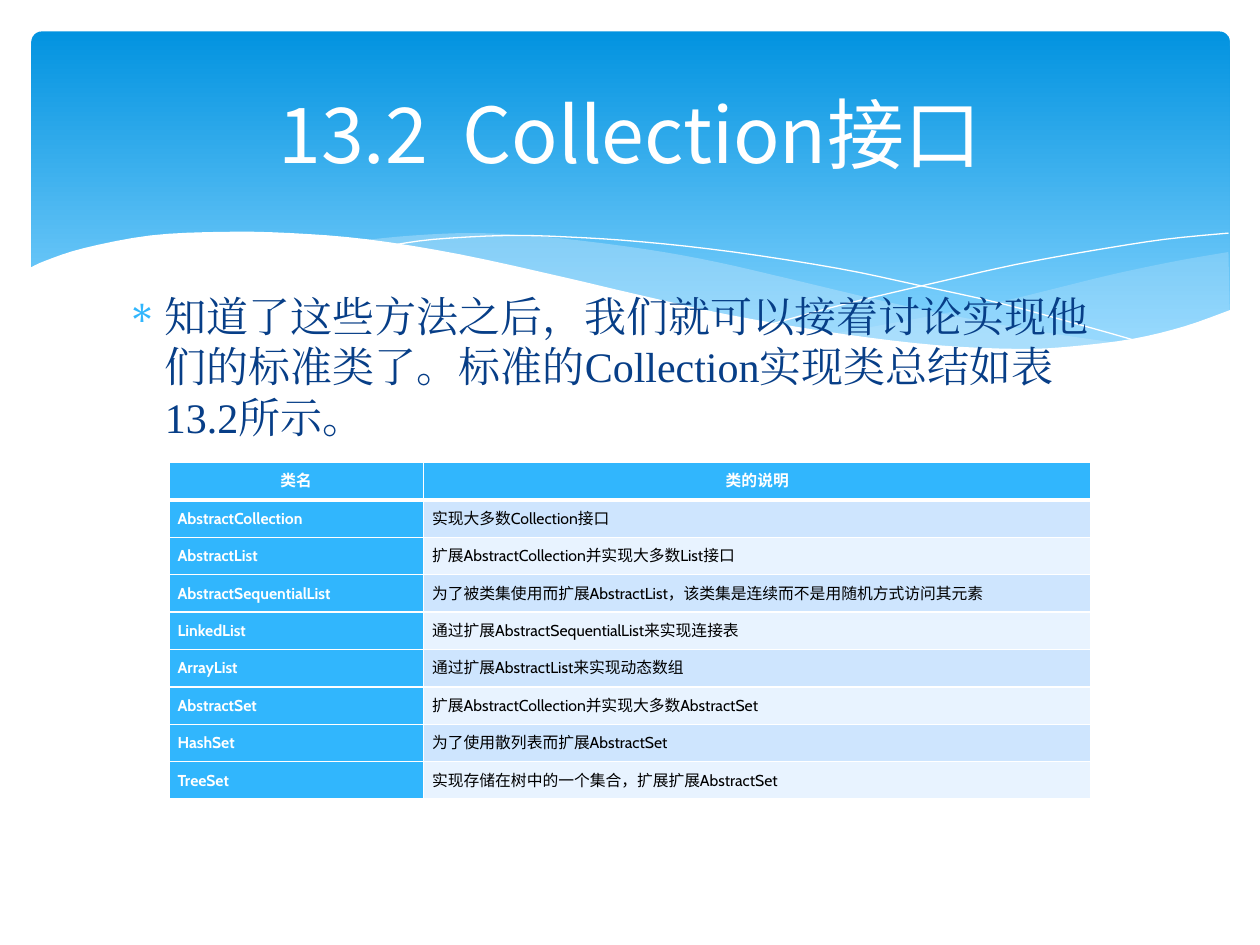
from lxml import etree
from pptx import Presentation
from pptx.dml.color import RGBColor
from pptx.enum.shapes import MSO_SHAPE
from pptx.enum.text import MSO_ANCHOR, PP_ALIGN
from pptx.oxml.ns import qn
from pptx.util import Pt

ROUNDED = MSO_SHAPE.ROUNDED_RECTANGLE
MIDDLE, CENTER, LEFT = MSO_ANCHOR.MIDDLE, PP_ALIGN.CENTER, PP_ALIGN.LEFT

WHITE = RGBColor(0xFF, 0xFF, 0xFF)
BLACK = RGBColor(0x00, 0x00, 0x00)
NAVY = RGBColor(0x07, 0x3E, 0x87)
SKY = RGBColor(0x31, 0xB6, 0xFD)
BANNER_TOP = RGBColor(0x02, 0x93, 0xE0)
BANNER_BOTTOM = RGBColor(0x83, 0xD3, 0xFE)
WAVE = RGBColor(0xC6, 0xE7, 0xFC)
BAND_DARK = RGBColor(0xCE, 0xE5, 0xFE)
BAND_LIGHT = RGBColor(0xE8, 0xF3, 0xFF)

# Key points of the waves, in points from the banner's top left corner
RIGHT_WAVE = [
    [(684, 126), (655, 131), (623.5, 137.5), (602, 142.6), (561.6, 152.6),
     (524, 160.6), (490, 167), (458, 172.8)],
    [(458, 172.8), (489.6, 177), (518.4, 180), (560, 182.2), (597, 180.7),
     (628, 176.4), (655, 170.6), (684.7, 159.8)],
]
LEFT_WAVE = [
    [(625, 178.6), (584.6, 172.8), (540, 165), (490, 154.8), (435, 141.8),
     (391.7, 131.8), (352, 124.6), (300, 118), (255.6, 115.2), (218, 116.6), (188, 119.5)],
    [(188, 119.5), (228, 125.3), (273, 134), (305, 141.8), (363.6, 154.8),
     (414.7, 165.6), (461, 173.5), (512, 180), (555, 182.2), (592.6, 181.4), (625, 178.6)],
]
FALLING_LINE = [
    (204.5, 122.4), (229.7, 118.8), (270.7, 116.6), (306, 117.4), (349, 120.2), (401, 126),
    (461, 135.4), (505.4, 144.7), (554.4, 155.5), (607.7, 170), (635, 177.8)]
RISING_LINE = [
    (423.4, 167), (465.8, 155.5), (520.6, 142.6), (562.3, 133.2), (605.5, 125.3),
    (647.3, 118.8), (684, 115.2)]
PAGE_EDGE = [
    [(685.4, 159), (658.8, 168.5), (629, 175.7), (594, 180), (564.5, 181.4), (517.7, 179.3),
     (463, 172.8), (399, 162), (344, 149.8), (304, 140.4), (245, 127.4), (192, 118.8),
     (147.6, 115.2), (109.4, 114.5), (67.7, 116.6), (30, 123.8), (8, 131), (-1.4, 135.4)],
    [(-1.4, 219), (685.4, 219)],
]

TITLE = "13.2  Collection接口"
INTRODUCTION = ("知道了这些方法之后，我们就可以接着讨论实现他们的标准类了。"
                "标准的Collection实现类总结如表13.2所示。")
CLASS_ROWS = [
    ("类名", "类的说明"),
    ("AbstractCollection", "实现大多数Collection接口"),
    ("AbstractList", "扩展AbstractCollection并实现大多数List接口"),
    ("AbstractSequentialList", "为了被类集使用而扩展AbstractList，该类集是连续而不是用随机方式访问其元素"),
    ("LinkedList", "通过扩展AbstractSequentialList来实现连接表"),
    ("ArrayList", "通过扩展AbstractList来实现动态数组"),
    ("AbstractSet", "扩展AbstractCollection并实现大多数AbstractSet"),
    ("HashSet", "为了使用散列表而扩展AbstractSet"),
    ("TreeSet", "实现存储在树中的一个集合，扩展扩展AbstractSet"),
]


def set_all(target, values):
    for name, value in values.items():
        setattr(target, name, value)


def write_text(paragraph, text, color, **font):
    run = paragraph.add_run()
    run.text = text
    set_all(run.font, font)
    run.font.color.rgb = color
    east_asian = etree.SubElement(run.font._element, qn("a:ea"))
    east_asian.set("typeface", font["name"])


def smooth(points, steps=4):
    """Return points on a Catmull-Rom curve through the key points."""
    if len(points) < 3:
        return points
    padded = [points[0], *points, points[-1]]
    curve = [points[0]]
    for a, b, c, d in zip(padded, padded[1:], padded[2:], padded[3:]):
        for step in range(1, steps + 1):
            t = step / steps
            curve.append(tuple(
                (2 * q + (r - p) * t + (2 * p - 5 * q + 4 * r - s) * t ** 2
                 + (3 * q - p - 3 * r + s) * t ** 3) / 2
                for p, q, r, s in zip(a, b, c, d)))
    return curve


def add_curve(slide, box, edges, fill=None, opacity=100):
    """Draw a filled outline, or a thin white line when there is no fill."""
    left, top = box[:2]
    points = [(Pt(left + x), Pt(top + y)) for edge in edges for x, y in smooth(edge)]
    builder = slide.shapes.build_freeform(*points[0], scale=1.0)
    builder.add_line_segments(points[1:], close=fill is not None)
    shape = builder.convert_to_shape()
    shape.shadow.inherit = False
    if fill is None:
        shape.fill.background()
        shape.line.color.rgb = WHITE
        shape.line.width = Pt(0)
        return
    shape.line.fill.background()
    shape.fill.solid()
    shape.fill.fore_color.rgb = fill
    if opacity < 100:
        color = shape._element.spPr.find(qn("a:solidFill"))[0]
        etree.SubElement(color, qn("a:alpha")).set("val", str(opacity * 1000))


def add_banner(slide, box):
    banner = slide.shapes.add_shape(ROUNDED, *map(Pt, box))
    banner.adjustments[0] = 0.03
    banner.shadow.inherit = False
    banner.line.fill.background()
    banner.fill.gradient()
    banner.fill.gradient_angle = 270
    stops = ((0, BANNER_TOP), (0.9, BANNER_BOTTOM))
    for stop, (position, color) in zip(banner.fill.gradient_stops, stops):
        stop.position = position
        stop.color.rgb = color
    add_curve(slide, box, RIGHT_WAVE, WAVE, 29)
    add_curve(slide, box, LEFT_WAVE, WAVE, 40)
    add_curve(slide, box, [FALLING_LINE])
    add_curve(slide, box, [RISING_LINE])
    add_curve(slide, box, PAGE_EDGE, WHITE)


def add_title(slide, box):
    frame = slide.shapes.add_textbox(*map(Pt, box)).text_frame
    set_all(frame, {"word_wrap": True, "vertical_anchor": MIDDLE})
    paragraph = frame.paragraphs[0]
    paragraph.alignment = CENTER
    write_text(paragraph, TITLE, WHITE, name="Noto Sans CJK SC", size=Pt(44))


def add_introduction(slide, box):
    frame = slide.shapes.add_textbox(*map(Pt, box)).text_frame
    frame.word_wrap = True
    paragraph = frame.paragraphs[0]
    paragraph.line_spacing = Pt(29)
    write_text(paragraph, INTRODUCTION, NAVY, name="Times New Roman", size=Pt(24))
    properties = paragraph._p.get_or_add_pPr()
    properties.set("marL", str(Pt(21.6)))
    properties.set("indent", str(Pt(-21.6)))
    bullet_color = etree.SubElement(properties, qn("a:buClr"))
    etree.SubElement(bullet_color, qn("a:srgbClr")).set("val", str(SKY))
    etree.SubElement(properties, qn("a:buChar")).set("char", "∗")


def add_borders(cell, widths):
    for side, width in widths.items():
        line = etree.SubElement(cell._tc.get_or_add_tcPr(), qn(f"a:ln{side}"))
        line.set("w", str(Pt(width)))
        fill = etree.SubElement(line, qn("a:solidFill"))
        etree.SubElement(fill, qn("a:srgbClr")).set("val", str(WHITE))


def add_class_table(slide, box):
    left, top, width, height = box
    table = slide.shapes.add_table(len(CLASS_ROWS), 2, *map(Pt, box)).table
    set_all(table, {"first_row": False, "horz_banding": False})
    name_width = 145.5
    table.columns[0].width = Pt(name_width)
    table.columns[1].width = Pt(width - name_width)
    for row, texts in enumerate(CLASS_ROWS):
        table.rows[row].height = Pt(height / len(CLASS_ROWS))
        for column, text in enumerate(texts):
            cell = table.cell(row, column)
            heading = row == 0 or column == 0
            add_borders(cell, {"L": 1, "R": 1, "T": 3 if row == 1 else 1,
                               "B": 3 if row == 0 else 1})
            cell.fill.solid()
            band = BAND_DARK if row % 2 else BAND_LIGHT
            cell.fill.fore_color.rgb = SKY if heading else band
            set_all(cell, {"vertical_anchor": MIDDLE, "margin_left": Pt(5),
                           "margin_right": Pt(5), "margin_top": 0, "margin_bottom": 0})
            paragraph = cell.text_frame.paragraphs[0]
            set_all(paragraph, {"alignment": CENTER if row == 0 else LEFT,
                                "line_spacing": Pt(11)})
            write_text(paragraph, text, WHITE if heading else BLACK,
                       name="Cabin", size=Pt(9), bold=heading)


def main():
    presentation = Presentation()
    set_all(presentation, {"slide_width": Pt(720), "slide_height": Pt(540)})
    slide = presentation.slides.add_slide(presentation.slide_layouts[6])
    add_banner(slide, (18, 18, 684.7, 194.4))
    add_title(slide, (36, 26.6, 648, 98.6))
    add_introduction(slide, (65.5, 162, 583.2, 271.4))
    add_class_table(slide, (96.5, 264.3, 527, 192.6))
    presentation.save("out.pptx")


if __name__ == "__main__":
    main()
